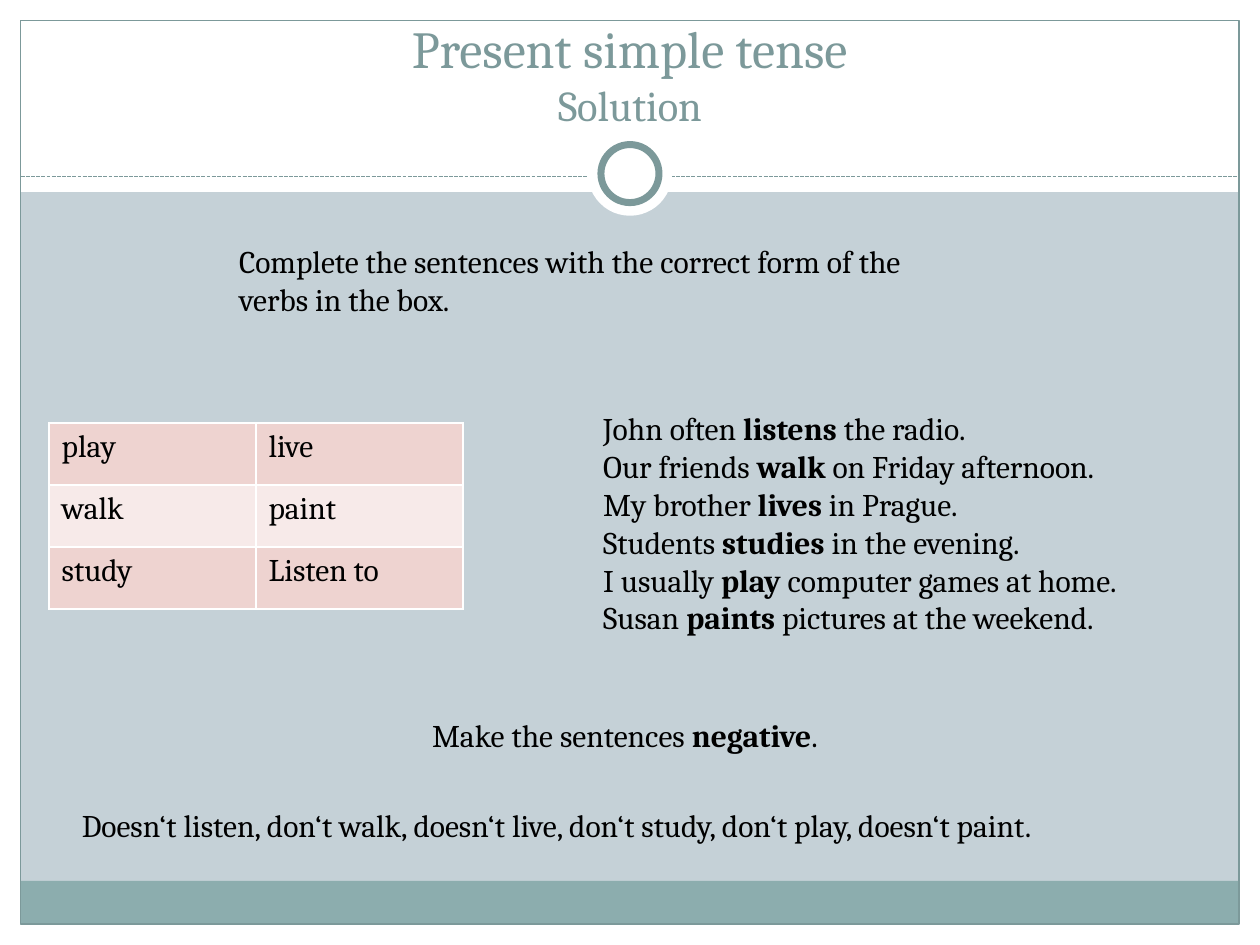
from lxml import etree
from pptx import Presentation
from pptx.dml.color import RGBColor
from pptx.enum.dml import MSO_LINE
from pptx.enum.shapes import MSO_CONNECTOR, MSO_SHAPE
from pptx.enum.text import MSO_ANCHOR, PP_ALIGN
from pptx.oxml.ns import qn
from pptx.util import Cm, Pt

RECT, OVAL = MSO_SHAPE.RECTANGLE, MSO_SHAPE.OVAL
STRAIGHT, DASH = MSO_CONNECTOR.STRAIGHT, MSO_LINE.SQUARE_DOT
LEFT, CENTER = PP_ALIGN.LEFT, PP_ALIGN.CENTER
TOP, BOTTOM = MSO_ANCHOR.TOP, MSO_ANCHOR.BOTTOM

FONT, BODY_SIZE = "Cambria", 18
WHITE, BLACK, TEAL, FOOTER = "FFFFFF", "000000", "7C999A", "8CADAE"
BACKGROUND = "C5D1D7"
ROW_FILLS = ["EED3D0", "F7EAE9"]

# Content: a paragraph is a list of (text, size, bold) runs; "\n" is a line break
TITLE = [[("Present simple tense\n", 29.7, False), ("Solution", 24.3, False)]]
VERBS = [("play", "live"), ("walk", "paint"), ("study", "Listen to")]
SENTENCES = [
    ("John often ", "listens ", "the radio."),
    ("Our friends ", "walk ", "on Friday afternoon."),
    ("My brother ", "lives", " in Prague."),
    ("Students ", "studies", " in the evening."),
    ("I usually ", "play ", "computer games at home."),
    ("Susan ", "paints ", "pictures at the weekend."),
]
TASK = [("Complete the sentences with the correct form of the \nverbs in the box.",)]
NEGATIVE_TASK = [("Make the sentences ", "negative", ".")]
NEGATIVES = [("Doesn‘t listen, don‘t walk, doesn‘t live, don‘t study, "
              "don‘t play, doesn‘t paint.",)]

# Page measures in cm
PAGE_W, PAGE_H, MARGIN = 25.4, 19.05, 0.42
HEADER_H, FOOTER_H = 3.87, 0.87
RULE_Y, RING_Y = 3.56, 3.5
INNER_W, INNER_H = PAGE_W - 2 * MARGIN, PAGE_H - 2 * MARGIN


def color(value):
    return RGBColor.from_string(value)


def add_part(kind, x, y, w, h, fill=None, line=None, width=0.75):
    part = slide.shapes.add_shape(kind, Cm(x), Cm(y), Cm(w), Cm(h))
    part.shadow.inherit = False
    if fill:
        part.fill.solid()
        part.fill.fore_color.rgb = color(fill)
    else:
        part.fill.background()
    if line:
        part.line.color.rgb = color(line)
        part.line.width = Pt(width)
    else:
        part.line.fill.background()


def add_circle(diameter, **style):
    add_part(OVAL, (PAGE_W - diameter) / 2, RING_Y - diameter / 2,
             diameter, diameter, fill=WHITE, **style)


def write(frame, paragraphs, ink=BLACK, align=LEFT):
    for i, runs in enumerate(paragraphs):
        paragraph = frame.add_paragraph() if i else frame.paragraphs[0]
        paragraph.alignment = align
        for text, size, bold in runs:
            for j, piece in enumerate(text.split("\n")):
                if j:
                    paragraph.add_line_break()
                if piece:
                    run = paragraph.add_run()
                    run.text = piece
                    run.font.name = FONT
                    run.font.size = Pt(size)
                    run.font.bold = bold
                    run.font.color.rgb = color(ink)


def add_text(x, y, w, h, paragraphs, anchor=TOP, **style):
    frame = slide.shapes.add_textbox(Cm(x), Cm(y), Cm(w), Cm(h)).text_frame
    frame.word_wrap = True
    frame.vertical_anchor = anchor
    write(frame, paragraphs, **style)


def body(paragraphs):
    """The second part of each sentence is the bold answer."""
    return [[(text, BODY_SIZE, i == 1) for i, text in enumerate(parts)]
            for parts in paragraphs]


def add_borders(cell):
    properties = cell._tc.get_or_add_tcPr()
    for i, side in enumerate(("a:lnL", "a:lnR", "a:lnT", "a:lnB")):
        border = etree.Element(qn(side), w=str(Pt(1)))
        fill = etree.SubElement(border, qn("a:solidFill"))
        etree.SubElement(fill, qn("a:srgbClr"), val=WHITE)
        properties.insert(i, border)


prs = Presentation()
prs.slide_width, prs.slide_height = Cm(PAGE_W), Cm(PAGE_H)
slide = prs.slides.add_slide(prs.slide_layouts[6])
slide.background.fill.solid()
slide.background.fill.fore_color.rgb = color(BACKGROUND)

# White margins, header and footer band
add_part(RECT, 0, PAGE_H - MARGIN, PAGE_W, MARGIN, fill=WHITE)
add_part(RECT, 0, 0, PAGE_W, HEADER_H, fill=WHITE)
for x in (0, PAGE_W - MARGIN):
    add_part(RECT, x, 0, MARGIN, PAGE_H, fill=WHITE)
add_part(RECT, MARGIN, PAGE_H - MARGIN - FOOTER_H, INNER_W, FOOTER_H, fill=FOOTER)
add_part(RECT, MARGIN, MARGIN, INNER_W, INNER_H, line=TEAL)

# Dashed rule with the ring on it
rule = slide.shapes.add_connector(STRAIGHT, Cm(MARGIN), Cm(RULE_Y),
                                  Cm(PAGE_W - MARGIN), Cm(RULE_Y))
rule.line.color.rgb = color(TEAL)
rule.line.width = Pt(0.75)
rule.line.dash_style = DASH
etree.SubElement(rule._element.spPr, qn("a:effectLst"))
add_circle(1.7)
add_circle(1.17, line=TEAL, width=4)

# Title and texts
add_text(0.85, 0.64, 23.7, 2.1, TITLE, anchor=BOTTOM, ink=TEAL, align=CENTER)
add_text(4.57, 4.75, 15.52, 1.8, body(TASK))
add_text(11.91, 8.13, 11.96, 4.88, body(SENTENCES))
add_text(8.46, 14.3, 9.17, 1.02, body(NEGATIVE_TASK))
add_text(1.4, 16.13, 21.87, 1.02, body(NEGATIVES))

# Verb box
COL_W, ROW_H = 4.17, 1.25
verb_table = slide.shapes.add_table(
    len(VERBS), len(VERBS[0]), Cm(0.99), Cm(8.53),
    Cm(COL_W * len(VERBS[0])), Cm(ROW_H * len(VERBS))).table
for r, verbs in enumerate(VERBS):
    for c, verb in enumerate(verbs):
        cell = verb_table.cell(r, c)
        cell.fill.solid()
        cell.fill.fore_color.rgb = color(ROW_FILLS[r % 2])
        add_borders(cell)
        write(cell.text_frame, body([(verb,)]))

prs.save("out.pptx")
